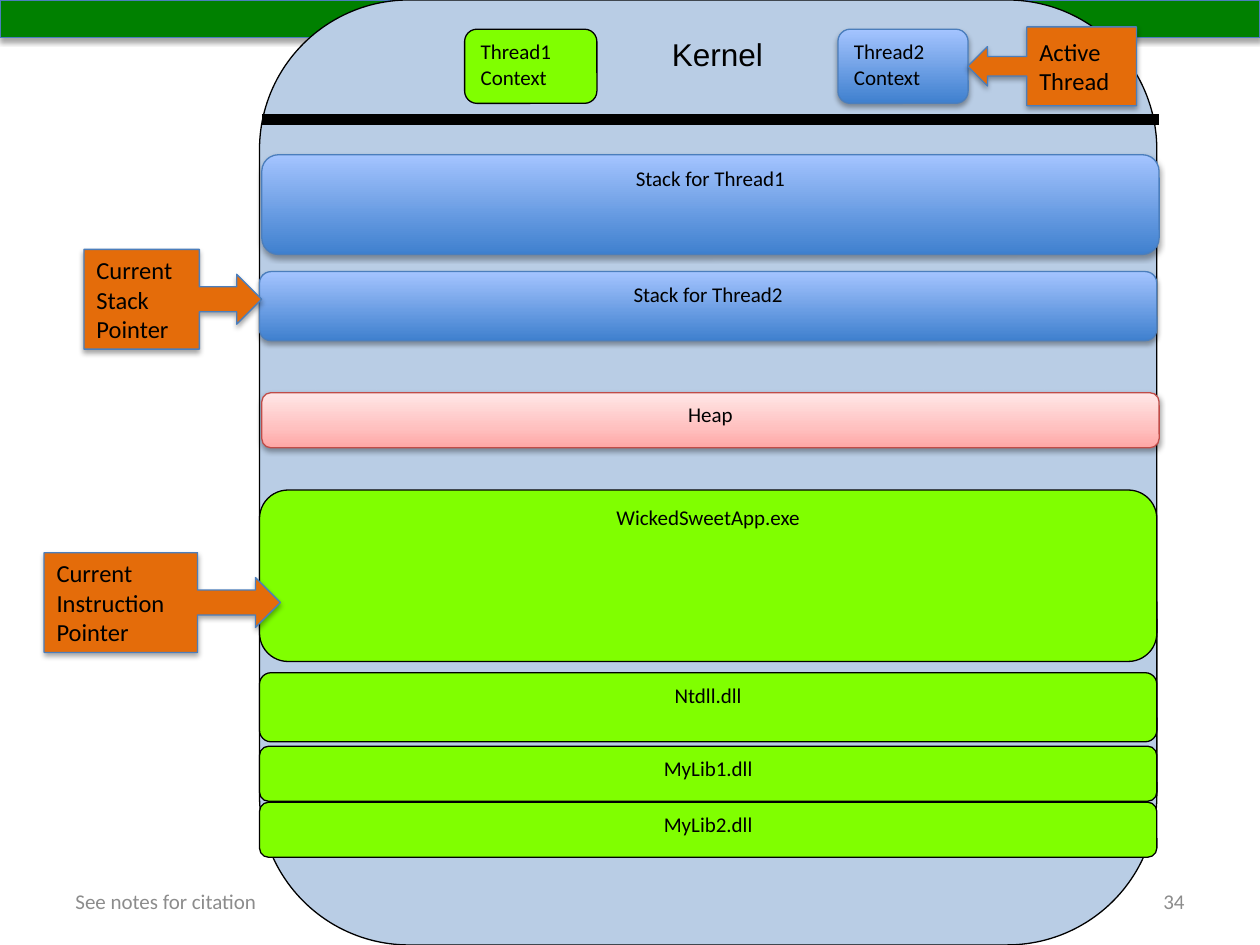
from copy import deepcopy

from lxml import etree
from pptx import Presentation
from pptx.dml.color import RGBColor
from pptx.enum import shapes, text
from pptx.oxml.ns import qn
from pptx.util import Pt

COLORS = {
    "black": "000000", "gray": "8C8C8C", "banner": "008000",
    "memory": "B9CDE5", "code": "80FF00", "callout": "E46C0A",
    "blue line": "4B7EBC", "red line": "BF4C48",
}
BLUE = [(0, "3F80CE"), (1, "A4C4FF")]
PINK = [(0, "FFA6A5"), (0.35, "FFC0BF"), (1, "FFE7E7")]
KIND = shapes.MSO_SHAPE
TOP, MIDDLE = text.MSO_ANCHOR.TOP, text.MSO_ANCHOR.MIDDLE
LEFT, CENTER, RIGHT = text.PP_ALIGN.LEFT, text.PP_ALIGN.CENTER, text.PP_ALIGN.RIGHT


def color(name):
    return RGBColor.from_string(COLORS[name])


class MemoryPage:
    """Style and drawing methods for one slide."""

    def __init__(self, page, font="Calibri", line_width=0.75):
        self.page, self.font, self.line_width = page, font, line_width

    def set_words(self, box, words, size=12, align=CENTER, anchor=TOP, ink="black", font=None):
        frame = box.text_frame
        frame.word_wrap = True
        frame.vertical_anchor = anchor
        frame.text = words
        for para in frame.paragraphs:
            para.alignment = align
            for span in para.runs:
                span.font.name = font or self.font
                span.font.size = Pt(size)
                span.font.color.rgb = color(ink)

    def label(self, place, words, **style):
        self.set_words(self.page.shapes.add_textbox(*map(Pt, place)), words, **style)

    def shape(self, kind, place, fill, line="black", shadow=False):
        shape = self.page.shapes.add_shape(kind, *map(Pt, place))
        if isinstance(fill, list):
            self.shade(shape, fill)
        else:
            shape.fill.solid()
            shape.fill.fore_color.rgb = color(fill)
        shape.line.color.rgb = color(line)
        shape.line.width = Pt(self.line_width)
        shape.shadow.inherit = False
        if shadow:
            self.drop_shadow(shape)
        return shape

    def shade(self, shape, stops):
        shape.fill.gradient()
        shape.fill.gradient_angle = 90
        holder = shape._element.spPr.find(".//" + qn("a:gsLst"))
        for _ in stops[2:]:
            holder.append(deepcopy(holder[0]))
        for stop, (position, tone) in zip(shape.fill.gradient_stops, stops):
            stop.position = position
            stop.color.rgb = RGBColor.from_string(tone)

    def drop_shadow(self, shape):
        effects = shape._element.spPr.find(qn("a:effectLst"))
        shadow = etree.SubElement(effects, qn("a:outerShdw"), blurRad=str(Pt(3.1)),
                                  dist=str(Pt(1.8)), dir="5400000", rotWithShape="0")
        tone = etree.SubElement(shadow, qn("a:srgbClr"), val=COLORS["black"])
        etree.SubElement(tone, qn("a:alpha"), val="35000")

    def block(self, place, words, fill="code", line="black", align=CENTER):
        box = self.shape(KIND.ROUNDED_RECTANGLE, place, fill, line, shadow=fill != "code")
        self.set_words(box, words, align=align)

    def callout(self, kind, place, words):
        box = self.shape(kind, place, "callout", "blue line", shadow=True)
        self.set_words(box, words, size=14, align=LEFT, anchor=MIDDLE)

    def rule(self, start, end, width):
        line = self.page.shapes.add_connector(
            shapes.MSO_CONNECTOR.STRAIGHT, *map(Pt, start + end))
        line.line.color.rgb = color("black")
        line.line.width = Pt(width)
        etree.SubElement(line._element.spPr, qn("a:effectLst"))


def main():
    deck = Presentation()
    deck.slide_width, deck.slide_height = Pt(720), Pt(540)
    memory = MemoryPage(deck.slides.add_slide(deck.slide_layouts[6]))

    # Footer and banner
    memory.label((36, 500.4, 168, 28.8), "See notes for citation",
                 align=LEFT, anchor=MIDDLE, ink="gray")
    memory.label((516, 500.4, 168, 28.8), "34", align=RIGHT, anchor=MIDDLE, ink="gray")
    memory.shape(KIND.RECTANGLE, (0, 0, 720, 21.6), "banner", "blue line", shadow=True)

    # Address space with the kernel on top
    left, shifted, width = 148.3, 149.6, 512.8
    memory.shape(KIND.ROUNDED_RECTANGLE, (left, 0, width, 540), "memory")
    memory.rule((shifted, 68.4), (shifted + width, 68.4), 6)
    memory.label((235.4, 16.6, 349.2, 42.5), "Kernel", size=18, font="Arial")

    # Memory regions
    for x, top, height, words, fill, line in (
        (left, 280, 98, "WickedSweetApp.exe", "code", "black"),
        (left, 426.4, 31.5, "MyLib1.dll", "code", "black"),
        (left, 458.4, 31.5, "MyLib2.dll", "code", "black"),
        (left, 384.4, 39.5, "Ntdll.dll", "code", "black"),
        (shifted, 224.4, 31.5, "Heap", PINK, "red line"),
        (shifted, 88.4, 57, "Stack for Thread1", BLUE, "blue line"),
        (left, 155.2, 39.5, "Stack for Thread2", BLUE, "blue line"),
    ):
        memory.block((x, top, width, height), words, fill, line)

    # Thread contexts
    memory.block((265.5, 16.7, 75.6, 42.4), "Thread1\vContext", align=LEFT)
    memory.block((478.8, 16.7, 74.4, 42.4), "Thread2\vContext", BLUE, "blue line", LEFT)

    # Pointers to the running thread
    memory.callout(KIND.RIGHT_ARROW_CALLOUT, (48, 142.5, 101.5, 57), "Current Stack Pointer")
    memory.callout(KIND.RIGHT_ARROW_CALLOUT, (25.2, 315.8, 135, 57),
                   "Current\vInstruction\vPointer")
    memory.callout(KIND.LEFT_ARROW_CALLOUT, (553, 15.4, 96.4, 45), "Active\vThread")

    deck.save("out.pptx")


if __name__ == "__main__":
    main()
